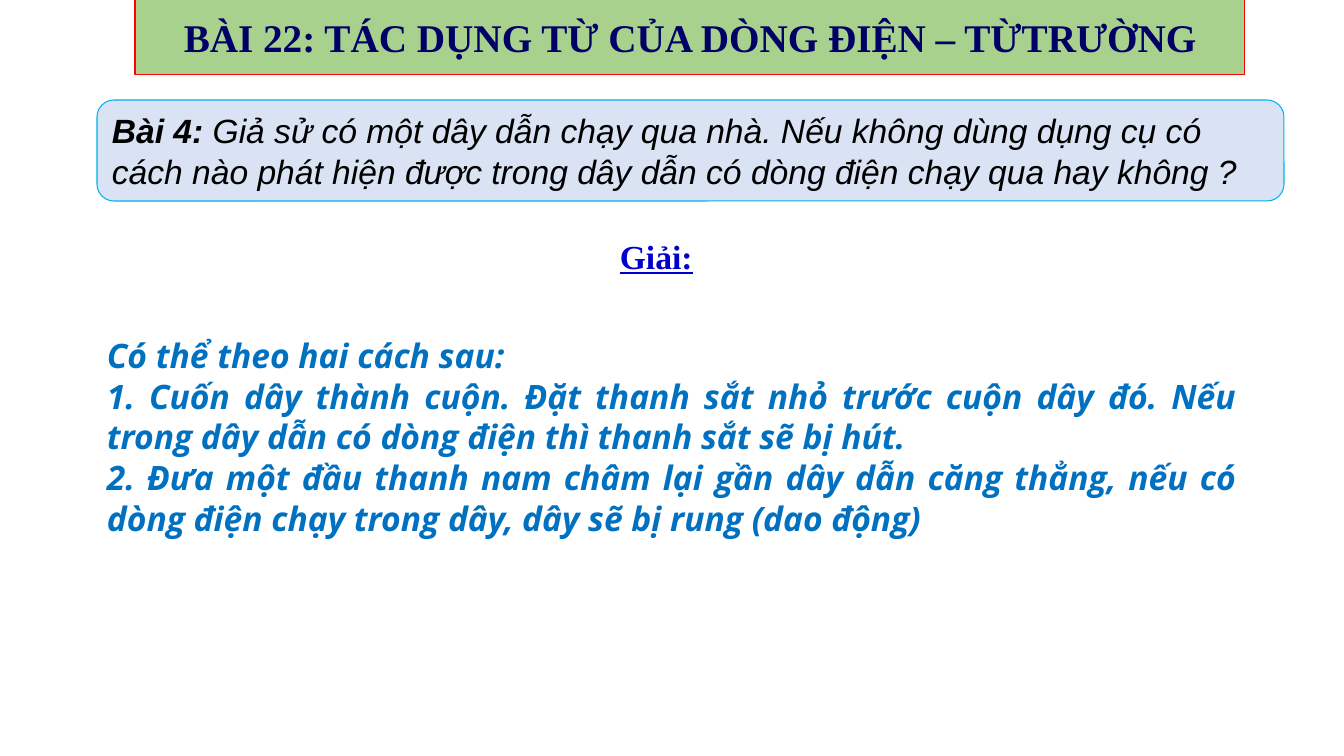
from lxml import etree
from pptx import Presentation
from pptx.dml.color import RGBColor
from pptx.enum.shapes import MSO_SHAPE
from pptx.enum.text import MSO_ANCHOR, MSO_AUTO_SIZE, PP_ALIGN
from pptx.oxml.ns import qn
from pptx.util import Emu, Pt

CENTER, LEFT, JUSTIFY = PP_ALIGN.CENTER, PP_ALIGN.LEFT, PP_ALIGN.JUSTIFY
TOP, MIDDLE = MSO_ANCHOR.TOP, MSO_ANCHOR.MIDDLE
NO_AUTOFIT = MSO_AUTO_SIZE.NONE
ROUNDED = MSO_SHAPE.ROUNDED_RECTANGLE
TITLE_ONLY = 5
EMU_PER_PX = 914400 / 100.8

TITLE = "BÀI 22: TÁC DỤNG TỪ CỦA DÒNG ĐIỆN – TỪTRƯỜNG"
QUESTION_LABEL = "Bài 4:\u00a0"
QUESTION = ("Giả sử có một dây dẫn chạy qua nhà. Nếu không dùng dụng cụ có cách nào "
            "phát hiện được trong dây dẫn có dòng điện chạy qua hay không ?")
ANSWER_HEADING = "Giải:"
ANSWERS = [
    "Có thể theo hai cách sau:",
    "1. Cuốn dây thành cuộn. Đặt thanh sắt nhỏ trước cuộn dây đó. Nếu trong dây "
    "dẫn có dòng điện thì thanh sắt sẽ bị hút.",
    "2. Đưa một đầu thanh nam châm lại gần dây dẫn căng thẳng, nếu có dòng điện "
    "chạy trong dây, dây sẽ bị rung (dao động)",
]


def px(length):
    return Emu(round(length * EMU_PER_PX))


def color(hex_string):
    return RGBColor.from_string(hex_string)


def paint(shape, fill, line):
    shape.fill.solid()
    shape.fill.fore_color.rgb = color(fill)
    shape.line.color.rgb = color(line)
    shape.line.width = Pt(0.75)


def set_frame(frame, anchor):
    frame.word_wrap = True
    frame.auto_size = NO_AUTOFIT
    frame.vertical_anchor = anchor


def style(para, name, size, text_color, align, italic=False):
    para.alignment = align
    font = para.font
    font.name, font.size, font.italic = name, Pt(size), italic
    font.color.rgb = color(text_color)


def add_title(page, box):
    """Lesson title on a horizontal scroll."""
    title = page.shapes.title
    title.left, title.top, title.width, title.height = map(px, box)
    geometry = etree.SubElement(title.element.spPr, qn("a:prstGeom"), prst="horizontalScroll")
    etree.SubElement(geometry, qn("a:avLst"))
    paint(title, "A9D18E", "FF0000")
    title.text = TITLE
    set_frame(title.text_frame, MIDDLE)
    para = title.text_frame.paragraphs[0]
    style(para, "Times New Roman", 28, "000066", CENTER)
    para.font.bold = True


def add_question(page, box):
    """Exercise statement in a rounded panel."""
    panel = page.shapes.add_shape(ROUNDED, *map(px, box))
    panel.shadow.inherit = False
    paint(panel, "DAE3F3", "00B0F0")
    set_frame(panel.text_frame, MIDDLE)
    para = panel.text_frame.paragraphs[0]
    style(para, "Arial", 24, "000000", LEFT, italic=True)
    for text, bold in ((QUESTION_LABEL, True), (QUESTION, False)):
        span = para.add_run()
        span.text = text
        span.font.bold = bold


def add_text(page, box, lines, name, text_color, italic=False):
    """Bold justified text, one paragraph per line."""
    frame = page.shapes.add_textbox(*map(px, box)).text_frame
    set_frame(frame, TOP)
    frame.text = "\n".join(lines)
    for para in frame.paragraphs:
        style(para, name, 24, text_color, JUSTIFY, italic)
        para.font.bold = True
    return frame


def add_answer(page, box):
    """Underlined heading with the solution below it."""
    left, top, width, height = box
    heading = add_text(page, (left + 513, top, 210, 50), [ANSWER_HEADING],
                       "Times New Roman", "0000CC")
    heading.paragraphs[0].font.underline = True
    solution = add_text(page, (left, top + 99, width, height - 99), ANSWERS,
                        "Open Sans", "0070C0", italic=True)
    for para in solution.paragraphs:
        para.line_spacing = Pt(29)


def main():
    deck = Presentation()
    deck.slide_width, deck.slide_height = px(1344), px(756)
    page = deck.slides.add_slide(deck.slide_layouts[TITLE_ONLY])
    add_title(page, (135, -2, 1110, 77))
    add_question(page, (97, 100, 1187, 101))
    add_answer(page, (97, 231, 1149, 313))
    deck.save("out.pptx")


if __name__ == "__main__":
    main()
